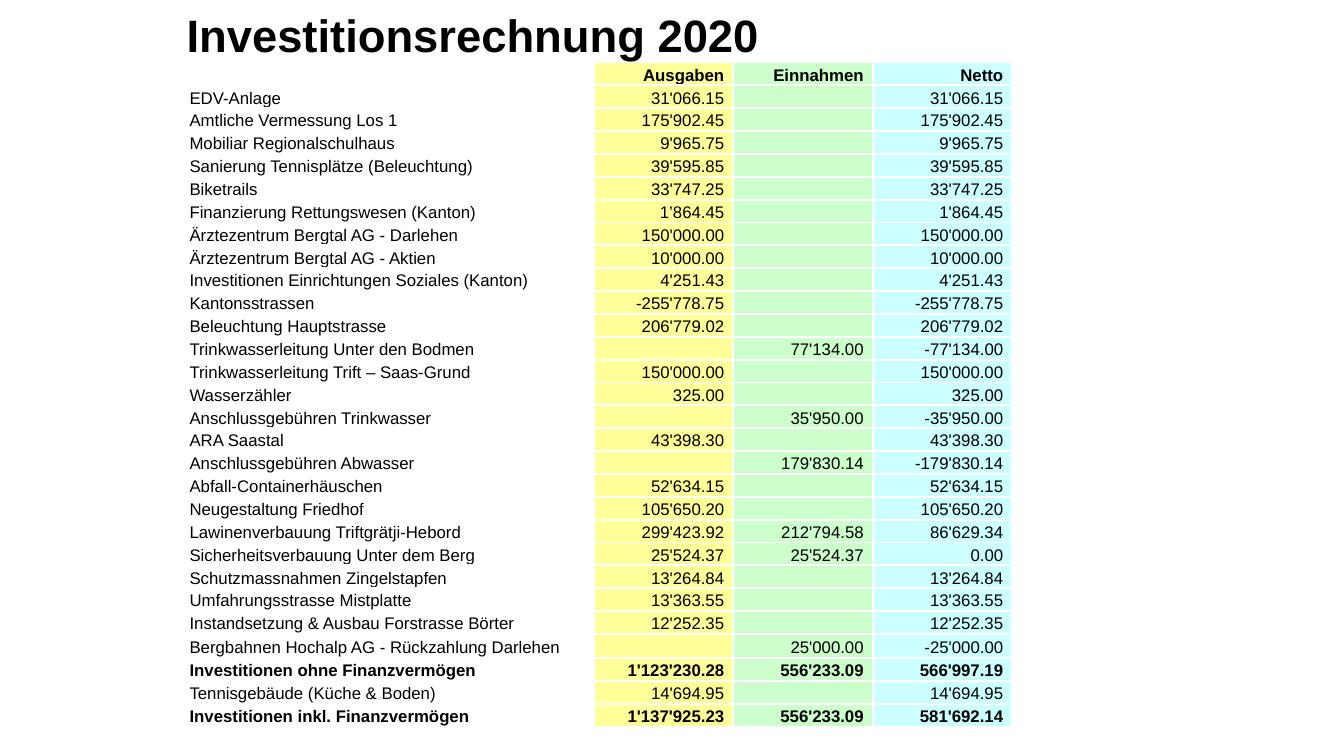
"""Build the slide with the investment accounts for 2020."""
from lxml import etree
from pptx import Presentation
from pptx import util as u
from pptx.dml.color import RGBColor
from pptx.enum import text
from pptx.oxml.ns import qn

WIDTH, HEIGHT = u.Inches(13.33), u.Inches(7.5)
FONT = "Arial"
COLOURS = {
    "text": "000000",
    "border": "FFFFFF",
    "Ausgaben": "FFFF99",
    "Einnahmen": "CCFFCC",
    "Netto": "CCFFFF",
}
HEADINGS = ("", "Ausgaben", "Einnahmen", "Netto")
COLUMN_SHARES = (30.76, 10.38, 10.38, 10.38)
TABLE_SHARE, TALL_ROW_SHARE = 87.87, 3.2
TALL_ROW = "Bergbahnen Hochalp AG - Rückzahlung Darlehen"
TOTALS = ("Investitionen ohne Finanzvermögen", "Investitionen inkl. Finanzvermögen")
ENTRIES = [
    ("EDV-Anlage", "31'066.15", "", "31'066.15"),
    ("Amtliche Vermessung Los 1", "175'902.45", "", "175'902.45"),
    ("Mobiliar Regionalschulhaus", "9'965.75", "", "9'965.75"),
    ("Sanierung Tennisplätze (Beleuchtung)", "39'595.85", "", "39'595.85"),
    ("Biketrails", "33'747.25", "", "33'747.25"),
    ("Finanzierung Rettungswesen (Kanton)", "1’864.45", "", "1'864.45"),
    ("Ärztezentrum Bergtal AG - Darlehen", "150'000.00", "", "150'000.00"),
    ("Ärztezentrum Bergtal AG - Aktien", "10'000.00", "", "10'000.00"),
    ("Investitionen Einrichtungen Soziales (Kanton)", "4'251.43", "", "4'251.43"),
    ("Kantonsstrassen", "-255'778.75", "", "-255'778.75"),
    ("Beleuchtung Hauptstrasse", "206'779.02", "", "206'779.02"),
    ("Trinkwasserleitung Unter den Bodmen", "", "77'134.00", "-77'134.00"),
    ("Trinkwasserleitung Trift – Saas-Grund", "150'000.00", "", "150'000.00"),
    ("Wasserzähler", "325.00", "", "325.00"),
    ("Anschlussgebühren Trinkwasser", "", "35'950.00", "-35'950.00"),
    ("ARA Saastal", "43'398.30", "", "43'398.30"),
    ("Anschlussgebühren Abwasser", "", "179'830.14", "-179'830.14"),
    ("Abfall-Containerhäuschen", "52'634.15", "", "52'634.15"),
    ("Neugestaltung Friedhof", "105'650.20", "", "105'650.20"),
    ("Lawinenverbauung Triftgrätji-Hebord", "299'423.92", "212'794.58", "86'629.34"),
    ("Sicherheitsverbauung Unter dem Berg", "25'524.37", "25'524.37", "0.00"),
    ("Schutzmassnahmen Zingelstapfen", "13'264.84", "", "13'264.84"),
    ("Umfahrungsstrasse Mistplatte", "13'363.55", "", "13'363.55"),
    ("Instandsetzung & Ausbau Forstrasse Börter", "12'252.35", "", "12'252.35"),
    (TALL_ROW, "", "25'000.00", "-25'000.00"),
    (TOTALS[0], "1'123'230.28", "556'233.09", "566'997.19"),
    ("Tennisgebäude (Küche & Boden)", "14'694.95", "", "14'694.95"),
    (TOTALS[1], "1'137'925.23", "556'233.09", "581'692.14"),
]


def across(share):
    """Return a percentage of the slide's width."""
    return round(WIDTH * share / 100)


def down(share):
    """Return a percentage of the slide's height."""
    return round(HEIGHT * share / 100)


def style_span(span, size, bold):
    """Set font, size, weight and colour of a run."""
    span.font.name = FONT
    span.font.size = u.Pt(size)
    span.font.bold = bold
    span.font.color.rgb = RGBColor.from_string(COLOURS["text"])


def add_title(page, words):
    """Place and format the title placeholder."""
    box = page.shapes.title
    box.left, box.top = across(13.13), down(1.07)
    box.width, box.height = across(83.57), down(7.87)
    frame = box.text_frame
    frame.text = words
    frame.word_wrap = True
    frame.auto_size = text.MSO_AUTO_SIZE.NONE
    frame.vertical_anchor = text.MSO_ANCHOR.MIDDLE
    para = frame.paragraphs[0]
    para.alignment = text.PP_ALIGN.LEFT
    para.line_spacing = 0.9
    style_span(para.runs[0], 32.4, True)


def add_borders(cell):
    """Draw the four borders of a cell."""
    properties = cell._tc.get_or_add_tcPr()
    for side in ("a:lnL", "a:lnR", "a:lnT", "a:lnB"):
        line = etree.SubElement(properties, qn(side), w=str(u.Pt(1.5)))
        fill = etree.SubElement(line, qn("a:solidFill"))
        etree.SubElement(fill, qn("a:srgbClr"), val=COLOURS["border"])


def fill_cell(cell, words, heading, bold):
    """Write and format one cell under its column heading."""
    add_borders(cell)
    cell.margin_top = cell.margin_bottom = 0
    cell.margin_left = cell.margin_right = u.Inches(0.09)
    cell.vertical_anchor = text.MSO_ANCHOR.MIDDLE
    if heading:
        cell.fill.solid()
        cell.fill.fore_color.rgb = RGBColor.from_string(COLOURS[heading])
    else:
        cell.fill.background()
    cell.text_frame.text = words
    para = cell.text_frame.paragraphs[0]
    para.alignment = text.PP_ALIGN.RIGHT if heading else text.PP_ALIGN.LEFT
    para.line_spacing = 1.15
    para.space_after = u.Pt(10)
    for span in para.runs:
        style_span(span, 12, bold)
    if not words:
        etree.SubElement(para._p, qn("a:endParaRPr"), sz="1200")


def add_accounts(page):
    """Add the table of expenses, income and net amounts."""
    rows = [HEADINGS, *ENTRIES]
    row_share = (TABLE_SHARE - TALL_ROW_SHARE) / (len(rows) - 1)
    table = page.shapes.add_table(
        len(rows), len(HEADINGS), across(13.43), down(8.27),
        across(sum(COLUMN_SHARES)), down(TABLE_SHARE)).table
    table.first_row = table.horz_banding = False
    for column, share in zip(table.columns, COLUMN_SHARES):
        column.width = across(share)
    for row, entry in zip(table.rows, rows):
        row.height = down(TALL_ROW_SHARE if entry[0] == TALL_ROW else row_share)
        bold = entry is HEADINGS or entry[0] in TOTALS
        for cell, words, heading in zip(row.cells, entry, HEADINGS):
            fill_cell(cell, words, heading, bold)


def main():
    """Build and save the deck."""
    deck = Presentation()
    deck.slide_width, deck.slide_height = WIDTH, HEIGHT
    page = deck.slides.add_slide(deck.slide_layouts[5])
    add_title(page, "Investitionsrechnung 2020")
    add_accounts(page)
    deck.save("out.pptx")


if __name__ == "__main__":
    main()
